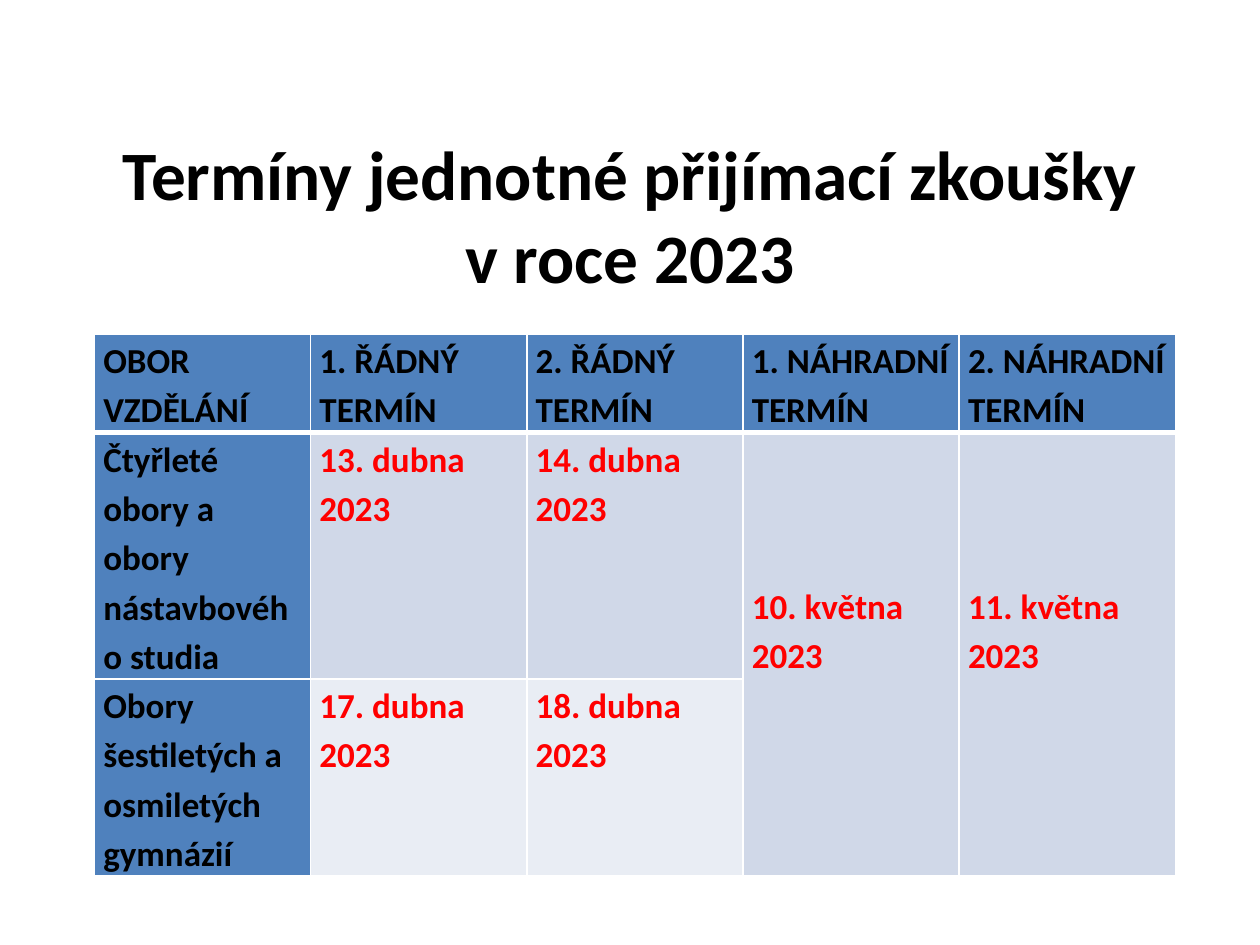
"""Build a slide with the 2023 dates of the unified entrance exam."""
import pptx
import pptx.dml.color
import pptx.enum.text
import pptx.oxml.xmlchemy
import pptx.util
from lxml import etree
from pptx.oxml.ns import qn


def rgb(value):
    return pptx.dml.color.RGBColor.from_string(value)


def add_borders(cell, widths):
    tcPr = cell._tc.get_or_add_tcPr()
    for i, (side, width) in enumerate(widths.items()):
        ln = etree.Element(qn("a:ln" + side), w=str(pptx.util.Pt(width)))
        fill = etree.SubElement(ln, qn("a:solidFill"))
        etree.SubElement(fill, qn("a:srgbClr"), val="FFFFFF")
        tcPr.insert(i, ln)


Inches, Pt = pptx.util.Inches, pptx.util.Pt
prs = pptx.Presentation()
prs.slide_width, prs.slide_height = Inches(10), Inches(7.5)
s = prs.slides.add_slide(prs.slide_layouts[5])
left = Inches(0.75)

title = s.shapes.title
place = {"left": left, "top": Inches(0.99), "width": Inches(8.5), "height": Inches(1.42)}
for name, value in place.items():
    setattr(title, name, value)
tf = title.text_frame
tf.text = "Termíny jednotné přijímací zkoušky v roce 2023"
frame = {
    "word_wrap": True,
    "auto_size": pptx.enum.text.MSO_AUTO_SIZE.NONE,
    "vertical_anchor": pptx.enum.text.MSO_ANCHOR.MIDDLE,
}
for name, value in frame.items():
    setattr(tf, name, value)
p = tf.paragraphs[0]
p.alignment = pptx.enum.text.PP_ALIGN.CENTER
r = p.runs[0]
for name, value in {"name": "Calibri", "size": Pt(39.6), "bold": True}.items():
    setattr(r.font, name, value)
r.font.color.rgb = rgb("000000")

rows = [
    ["OBOR VZDĚLÁNÍ", "1. ŘÁDNÝ TERMÍN", "2. ŘÁDNÝ TERMÍN", "1. NÁHRADNÍ TERMÍN", "2. NÁHRADNÍ TERMÍN"],
    ["Čtyřleté obory a obory nástavbového studia", "13. dubna 2023", "14. dubna 2023",
     "10. května 2023", "11. května 2023"],
    ["Obory šestiletých a osmiletých gymnázií", "17. dubna 2023", "18. dubna 2023", "", ""],
]
fills = ["4F81BD", "D0D8E8", "E9EDF4"]
line = 0.39
row_lines = [2, 5, 4]
table = s.shapes.add_table(
    len(rows), len(rows[0]), left, Inches(2.65), Inches(8.58), Inches(line * sum(row_lines))
).table
for row, lines in zip(table.rows, row_lines):
    row.height = Inches(line * lines)
for col in (3, 4):
    table.cell(1, col).merge(table.cell(2, col))

for i, texts in enumerate(rows):
    for j, text in enumerate(texts):
        cell = table.cell(i, j)
        substitute = i > 0 and j > 2
        heading = i == 0 or j == 0
        margins = {
            "margin_left": Inches(0.07),
            "margin_right": Inches(0.07),
            "margin_top": Inches(3 * line if substitute else 0),
            "margin_bottom": 0,
        }
        for name, value in margins.items():
            setattr(cell, name, value)
        cell.fill.solid()
        cell.fill.fore_color.rgb = rgb(fills[0] if heading else fills[1] if substitute else fills[i])
        add_borders(cell, {"L": 1, "R": 1, "T": 3 if i == 1 else 1, "B": 3 if i == 0 else 1})
        if text:
            p = cell.text_frame.paragraphs[0]
            p.line_spacing = 1.15
            r = p.add_run()
            r.text = text
            for name, value in {"name": "Calibri", "size": Pt(20), "bold": True}.items():
                setattr(r.font, name, value)
            r.font.color.rgb = rgb("000000" if heading else "FF0000")

prs.save("out.pptx")
